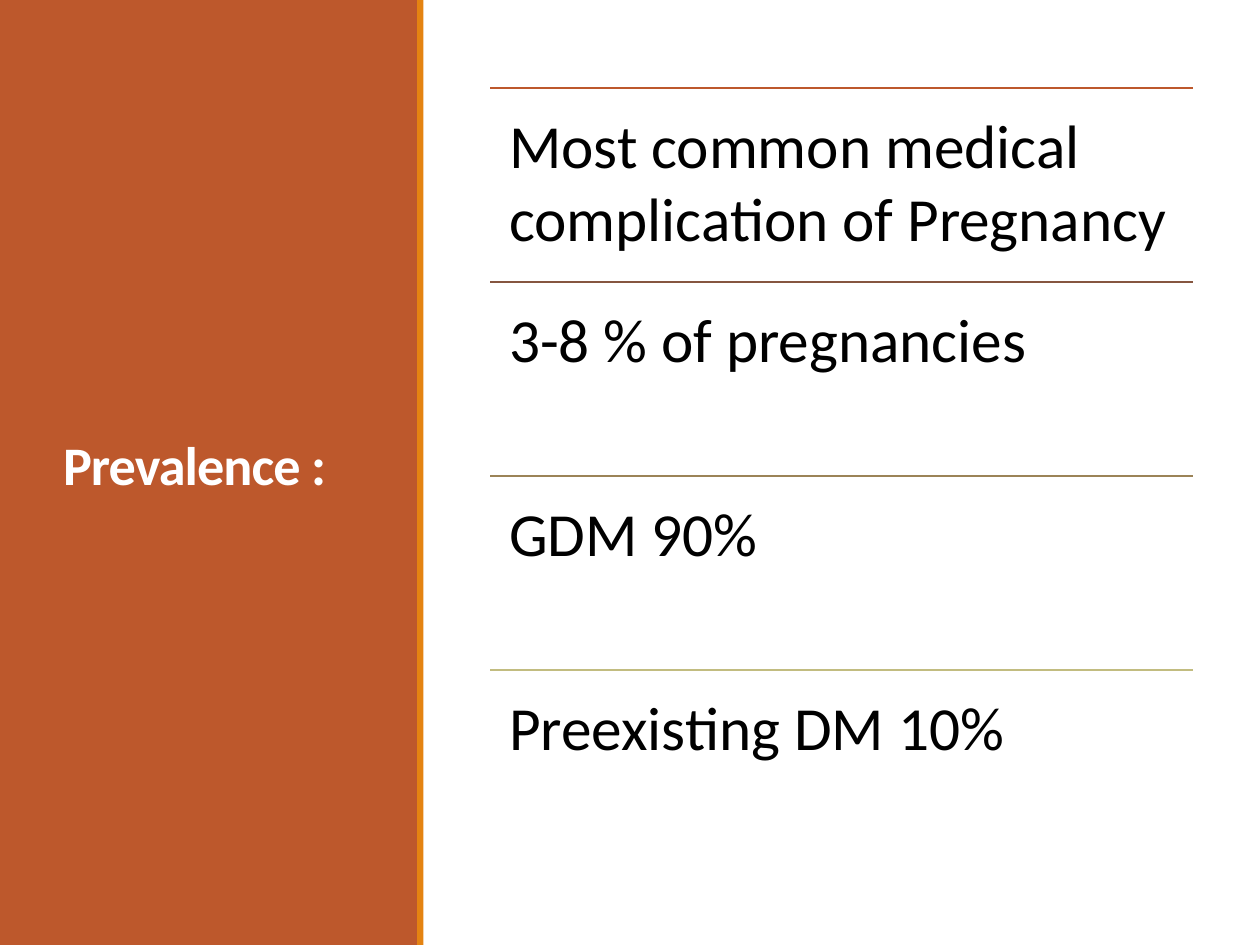
import pptx
import pptx.util
import pptx.dml.color
import pptx.enum.shapes
import pptx.enum.text
import pptx.oxml.ns
import lxml.etree

Inches = pptx.util.Inches
Pt = pptx.util.Pt
RGBColor = pptx.dml.color.RGBColor

RUST = RGBColor(0xBD, 0x58, 0x2C)
AMBER = RGBColor(0xE4, 0x83, 0x12)
WHITE = RGBColor(0xFF, 0xFF, 0xFF)
BLACK = RGBColor(0x00, 0x00, 0x00)
BROWN = RGBColor(0x86, 0x56, 0x40)
TAN = RGBColor(0x9B, 0x83, 0x57)
SAGE = RGBColor(0xC2, 0xBC, 0x80)

FACTS = [
    ("Most common medical complication of Pregnancy", RUST),
    ("3-8 % of pregnancies", BROWN),
    ("GDM 90%", TAN),
    ("Preexisting DM 10%", SAGE),
]


class Page:
    face = "Calibri"

    def __init__(self, slide):
        self.slide = slide
        self.shapes = slide.shapes

    def style(self, para, size, color, bold=False):
        font = para.font
        font.name = self.face
        font.size = Pt(size)
        font.bold = bold
        font.color.rgb = color

    def bar(self, left, width, color):
        bar = self.shapes.add_shape(
            pptx.enum.shapes.MSO_SHAPE.RECTANGLE,
            Inches(left), 0, Inches(width), Inches(7.5))
        bar.shadow.inherit = False
        bar.fill.solid()
        bar.fill.fore_color.rgb = color
        bar.line.fill.background()

    def title(self, text, left, top, width, height):
        title = self.shapes.title
        title.left, title.top = Inches(left), Inches(top)
        title.width, title.height = Inches(width), Inches(height)
        frame = title.text_frame
        frame.text = text
        frame.word_wrap = True
        frame.auto_size = pptx.enum.text.MSO_AUTO_SIZE.NONE
        frame.vertical_anchor = pptx.enum.text.MSO_ANCHOR.MIDDLE
        para = frame.paragraphs[0]
        para.alignment = pptx.enum.text.PP_ALIGN.LEFT
        para.line_spacing = 0.85
        self.style(para, 31, WHITE, True)
        para.runs[0].font._element.set("spc", "-50")
        self.shapes._spTree.append(title._element)

    def rule(self, left, top, width, color):
        rule = self.shapes.add_connector(
            pptx.enum.shapes.MSO_CONNECTOR.STRAIGHT,
            Inches(left), Inches(top), Inches(left + width), Inches(top))
        rule.line.color.rgb = color
        rule.line.width = Pt(1.25)
        lxml.etree.SubElement(
            rule._element.spPr, pptx.oxml.ns.qn("a:effectLst"))

    def note(self, text, left, top, width, height):
        box = self.shapes.add_textbox(
            Inches(left), Inches(top), Inches(width), Inches(height))
        frame = box.text_frame
        frame.word_wrap = True
        frame.margin_left = frame.margin_right = Inches(0.15)
        frame.margin_top = frame.margin_bottom = Inches(0.15)
        frame.text = text
        self.style(frame.paragraphs[0], 35, BLACK)


def main():
    deck = pptx.Presentation()
    deck.slide_width = Inches(10)
    deck.slide_height = Inches(7.5)
    page = Page(deck.slides.add_slide(deck.slide_layouts[5]))

    page.bar(0, 3.32, RUST)
    page.title("Prevalence :", 0.4, 0.57, 2.53, 6.31)
    page.bar(3.31, 0.05, AMBER)

    left, width, step = 3.89, 5.58, 1.54
    for row, (text, color) in enumerate(FACTS):
        top = 0.7 + row * step
        page.rule(left, top, width, color)
        page.note(text, left, top, width, step)

    deck.save("out.pptx")


if __name__ == "__main__":
    main()
